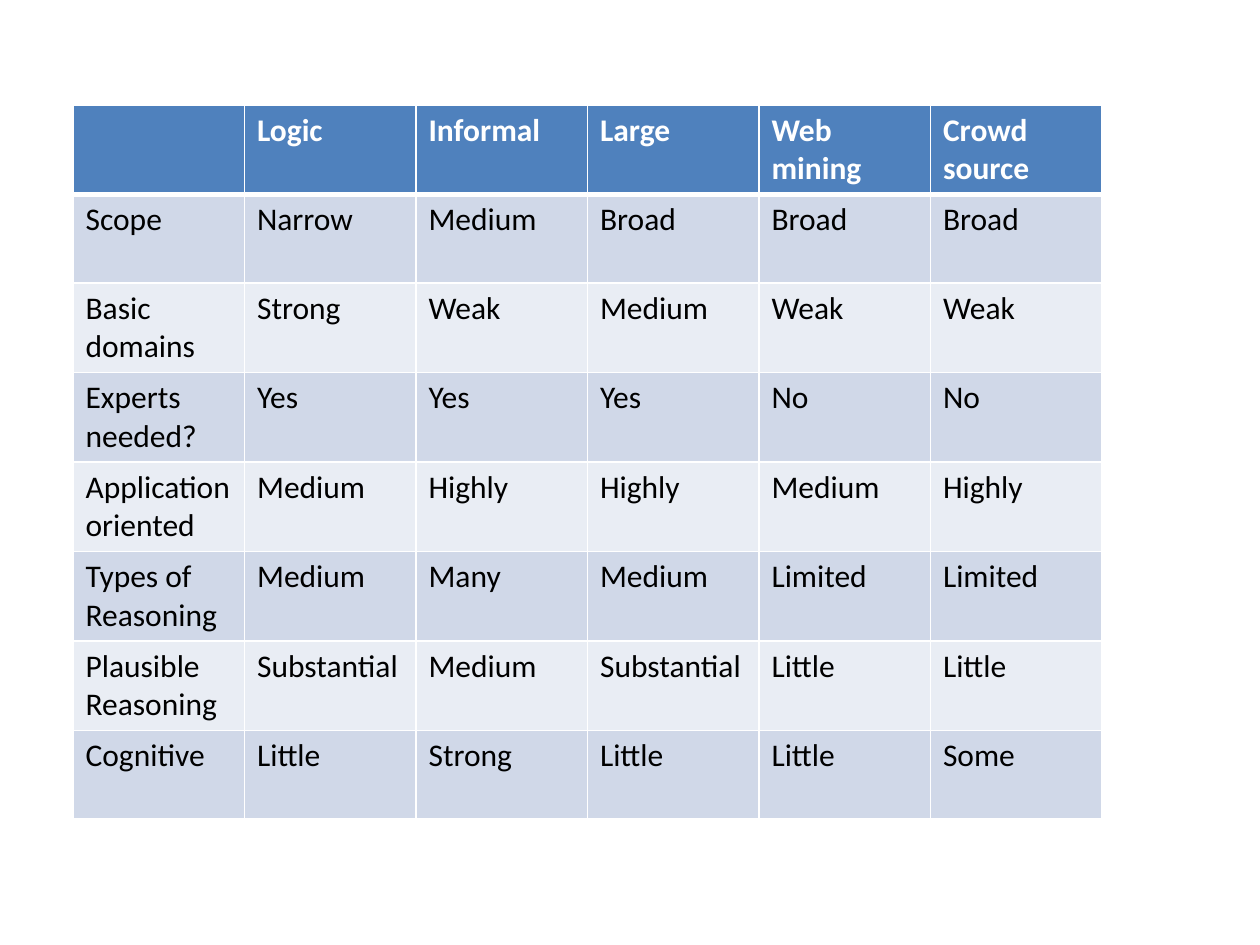
"""Build a slide with a table comparing approaches to commonsense reasoning."""
import dataclasses

import lxml.etree
import pptx
import pptx.dml.color
import pptx.oxml.ns
import pptx.util

HEADINGS = ["", "Logic", "Informal", "Large", "Web mining", "Crowd\nsource"]
CRITERIA = [
    ["Scope", "Narrow", "Medium", "Broad", "Broad", "Broad"],
    ["Basic\ndomains", "Strong", "Weak", "Medium", "Weak", "Weak"],
    ["Experts needed?", "Yes", "Yes", "Yes", "No", "No"],
    ["Application\noriented", "Medium", "Highly", "Highly", "Medium", "Highly"],
    ["Types of\nReasoning", "Medium", "Many", "Medium", "Limited", "Limited"],
    ["Plausible\nReasoning", "Substantial", "Medium", "Substantial", "Little", "Little"],
    ["Cognitive", "Little", "Strong", "Little", "Little", "Some"],
]


@dataclasses.dataclass(frozen=True)
class Theme:
    font: str = "Calibri"
    size: int = 18
    heading_fill: str = "4F81BD"
    heading_text: str = "FFFFFF"
    bands: tuple = ("D0D8E8", "E9EDF4")
    text: str = "000000"
    rule: str = "FFFFFF"
    thin: int = 1
    thick: int = 3


THEME = Theme()
PX = pptx.util.Inches(1) / 126
SLIDE_SIZE = (1260, 945)
TABLE_BOX = (73, 105, 1029, 706)


def px(length):
    return pptx.util.Emu(round(length * PX))


def rgb(value):
    return pptx.dml.color.RGBColor.from_string(value)


def add_borders(cell, widths):
    qn = pptx.oxml.ns.qn
    properties = cell._tc.get_or_add_tcPr()
    for position, (side, points) in enumerate(widths.items()):
        line = lxml.etree.Element(qn(f"a:ln{side}"), w=str(pptx.util.Pt(points)))
        fill = lxml.etree.SubElement(line, qn("a:solidFill"))
        lxml.etree.SubElement(fill, qn("a:srgbClr"), val=THEME.rule)
        properties.insert(position, line)


def fill_cell(cell, text, row):
    is_heading = row == 0
    cell.text = text
    cell.fill.solid()
    fill = THEME.heading_fill if is_heading else THEME.bands[(row - 1) % 2]
    cell.fill.fore_color.rgb = rgb(fill)
    for paragraph in cell.text_frame.paragraphs:
        font = paragraph.font
        font.name = THEME.font
        font.size = pptx.util.Pt(THEME.size)
        font.bold = is_heading
        font.color.rgb = rgb(THEME.heading_text if is_heading else THEME.text)
    add_borders(cell, {
        "L": THEME.thin,
        "R": THEME.thin,
        "T": THEME.thick if row == 1 else THEME.thin,
        "B": THEME.thick if is_heading else THEME.thin,
    })


def main():
    presentation = pptx.Presentation()
    presentation.slide_width, presentation.slide_height = map(px, SLIDE_SIZE)
    slide = presentation.slides.add_slide(presentation.slide_layouts[6])
    rows = [HEADINGS, *CRITERIA]
    comparison = slide.shapes.add_table(
        len(rows), len(HEADINGS), *map(px, TABLE_BOX)).table
    for row, texts in enumerate(rows):
        for column, text in enumerate(texts):
            fill_cell(comparison.cell(row, column), text, row)
    presentation.save("out.pptx")


if __name__ == "__main__":
    main()
